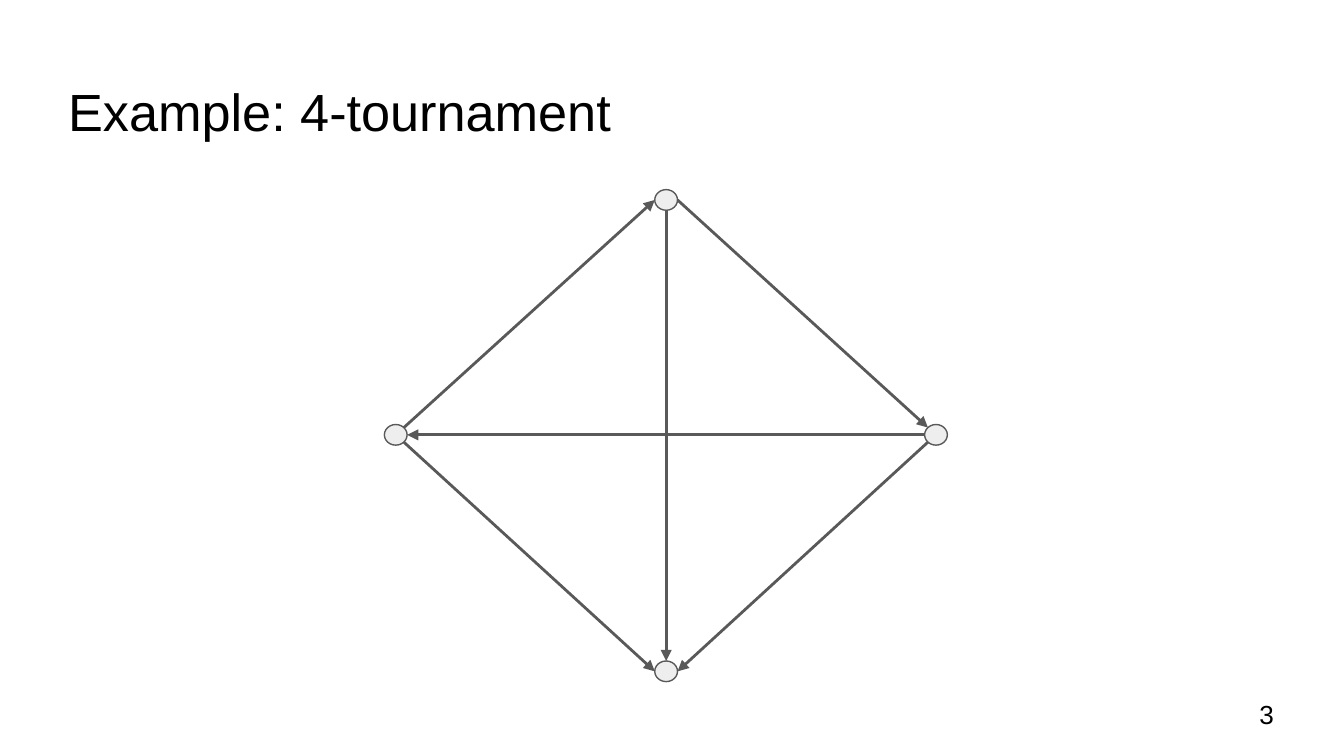
from dataclasses import dataclass
from math import cos, radians, sin

from lxml.etree import SubElement
from pptx import Presentation
from pptx.dml.color import RGBColor as Color
from pptx.enum.shapes import MSO_CONNECTOR as Connector, MSO_SHAPE as Shape
from pptx.enum.text import MSO_ANCHOR as Anchor
from pptx.oxml.ns import qn
from pptx.util import Cm, Pt


@dataclass(frozen=True)
class Theme:
    font: str = "Arial"
    text: Color = Color(0x00, 0x00, 0x00)
    node_fill: Color = Color(0xEE, 0xEE, 0xEE)
    line: Color = Color(0x59, 0x59, 0x59)
    title_size: int = 28
    number_size: int = 14
    outline_width: float = 0.75
    arrow_width: float = 1.5


NODE_WIDTH, NODE_HEIGHT = 0.43, 0.39
INSET = 0.25

# Node centres in centimetres
NODES = {
    "top": (12.59, 3.78),
    "right": (17.69, 8.22),
    "left": (7.48, 8.22),
    "bottom": (12.59, 12.69),
}

# Start node, angle on its rim, end node, angle on its rim (clockwise from right)
ARROWS = [
    ("top", 0, "right", 225),
    ("top", 90, "bottom", 270),
    ("left", 315, "top", 180),
    ("right", 135, "bottom", 0),
    ("right", 180, "left", 0),
    ("left", 45, "bottom", 180),
]


def rim_point(node, angle):
    """Return the point on a node's outline at an angle in degrees."""
    x, y = NODES[node]
    turn = radians(angle)
    return (Cm(x + NODE_WIDTH / 2 * cos(turn)),
            Cm(y + NODE_HEIGHT / 2 * sin(turn)))


class SlideBuilder:
    def __init__(self, slide, theme):
        self.slide = slide
        self.theme = theme

    def text(self, text, *, left, top, width, height, size,
             anchor=Anchor.TOP, top_inset=INSET):
        box = self.slide.shapes.add_textbox(Cm(left), Cm(top), Cm(width), Cm(height))
        frame = box.text_frame
        frame.word_wrap = True
        frame.vertical_anchor = anchor
        frame.margin_left = frame.margin_right = frame.margin_bottom = Cm(INSET)
        frame.margin_top = Cm(top_inset)
        run = frame.paragraphs[0].add_run()
        run.text = text
        run.font.name = self.theme.font
        run.font.size = Pt(size)
        run.font.color.rgb = self.theme.text

    def node(self, x, y):
        shape = self.slide.shapes.add_shape(
            Shape.OVAL, Cm(x - NODE_WIDTH / 2), Cm(y - NODE_HEIGHT / 2),
            Cm(NODE_WIDTH), Cm(NODE_HEIGHT))
        shape.shadow.inherit = False
        shape.fill.solid()
        shape.fill.fore_color.rgb = self.theme.node_fill
        shape.line.color.rgb = self.theme.line
        shape.line.width = Pt(self.theme.outline_width)

    def arrow(self, start, end):
        connector = self.slide.shapes.add_connector(Connector.STRAIGHT, *start, *end)
        connector.line.color.rgb = self.theme.line
        connector.line.width = Pt(self.theme.arrow_width)
        properties = connector._element.spPr
        SubElement(properties.find(qn("a:ln")), qn("a:tailEnd"),
                   type="triangle", w="med", len="med")
        SubElement(properties, qn("a:effectLst"))


def main():
    presentation = Presentation()
    presentation.slide_width, presentation.slide_height = Cm(25.4), Cm(14.29)
    theme = Theme()
    slide = presentation.slides.add_slide(presentation.slide_layouts[6])
    builder = SlideBuilder(slide, theme)

    builder.text("Example: 4-tournament", left=1.04, top=1.14, width=23.67,
                 height=1.6, size=theme.title_size, top_inset=0.36)
    for center in NODES.values():
        builder.node(*center)
    for start, start_angle, end, end_angle in ARROWS:
        builder.arrow(rim_point(start, start_angle), rim_point(end, end_angle))
    builder.text("3", left=23.55, top=12.95, width=1.52, height=1.09,
                 size=theme.number_size, anchor=Anchor.MIDDLE)

    presentation.save("out.pptx")


if __name__ == "__main__":
    main()
